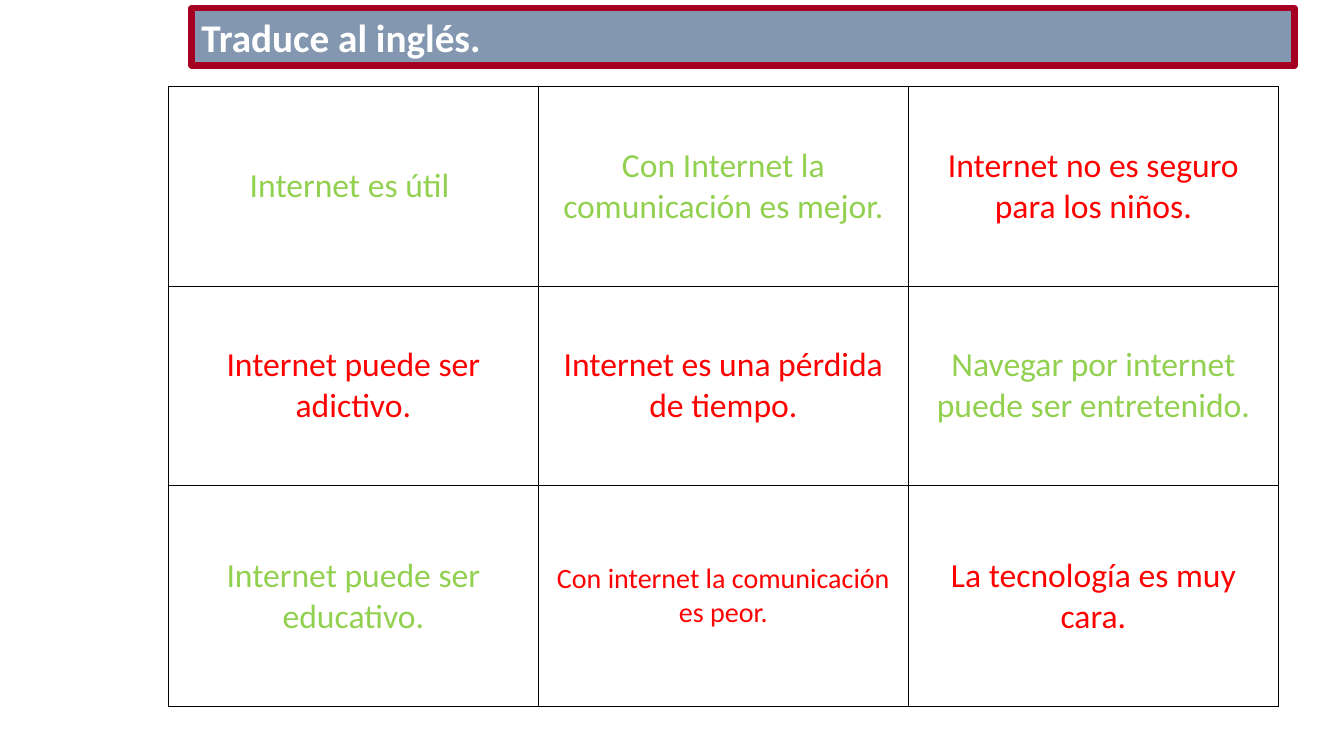
from pptx import Presentation
from pptx.dml.color import RGBColor
from pptx.enum.shapes import MSO_SHAPE
from pptx.enum.text import MSO_ANCHOR, PP_ALIGN
from pptx.oxml import parse_xml
from pptx.oxml.ns import nsdecls
from pptx.util import Inches, Pt

COLORS = {"pro": "92D050", "con": "FF0000", "bar": "8497B0",
          "frame": "A50021", "title": "FFFFFF", "grid": "000000"}


def rgb(name):
    return RGBColor.from_string(COLORS[name])


def add_borders(cell):
    tc_pr = cell._tc.get_or_add_tcPr()
    for i, side in enumerate(("lnL", "lnR", "lnT", "lnB")):
        tc_pr.insert(i, parse_xml(
            f'<a:{side} {nsdecls("a")} w="{Pt(1)}"><a:solidFill>'
            f'<a:srgbClr val="{COLORS["grid"]}"/></a:solidFill></a:{side}>'))


prs = Presentation()
prs.slide_width, prs.slide_height = Inches(13.33), Inches(7.5)
s = prs.slides.add_slide(prs.slide_layouts[6])

# Table of sentences: text, opinion, size
rows = [
    [("Internet es útil ", "pro", 24),
     ("Con Internet la comunicación es mejor.", "pro", 24),
     ("Internet no es seguro para los niños.", "con", 24)],
    [("Internet puede ser adictivo.", "con", 24),
     ("Internet es una pérdida de tiempo.", "con", 24),
     ("Navegar por internet puede ser entretenido.", "pro", 24)],
    [("Internet puede ser educativo.", "pro", 24),
     ("Con internet la comunicación es peor.", "con", 20),
     ("La tecnología es muy cara.", "con", 24)],
]
table = s.shapes.add_table(3, 3, Inches(1.67), Inches(0.86),
                           Inches(11.01), Inches(6.16)).table
table.first_row = table.horz_banding = False
for col in table.columns:
    col.width = Inches(3.67)
for row, height in zip(table.rows, (1.98, 1.98, 2.19)):
    row.height = Inches(height)

for i, row in enumerate(rows):
    for j, (text, opinion, size) in enumerate(row):
        cell = table.cell(i, j)
        cell.text = text
        cell.vertical_anchor = MSO_ANCHOR.MIDDLE
        cell.fill.background()
        add_borders(cell)
        p = cell.text_frame.paragraphs[0]
        p.alignment = PP_ALIGN.CENTER
        p.font.name, p.font.size = "Calibri", Pt(size)
        p.font.color.rgb = rgb(opinion)

# Title bar
bar = s.shapes.add_shape(MSO_SHAPE.RECTANGLE, Inches(1.9), Inches(0.08),
                         Inches(10.94), Inches(0.57))
bar.shadow.inherit = False
bar.fill.solid()
bar.fill.fore_color.rgb = rgb("bar")
bar.line.color.rgb = rgb("frame")
bar.line.width = Pt(4.5)
tf = bar.text_frame
tf.word_wrap = True
tf.vertical_anchor = MSO_ANCHOR.TOP
p = tf.paragraphs[0]
p.text = "Traduce al inglés."
p.alignment = PP_ALIGN.LEFT
p.font.name, p.font.size, p.font.bold = "Calibri", Pt(28), True
p.font.color.rgb = rgb("title")

prs.save("out.pptx")
